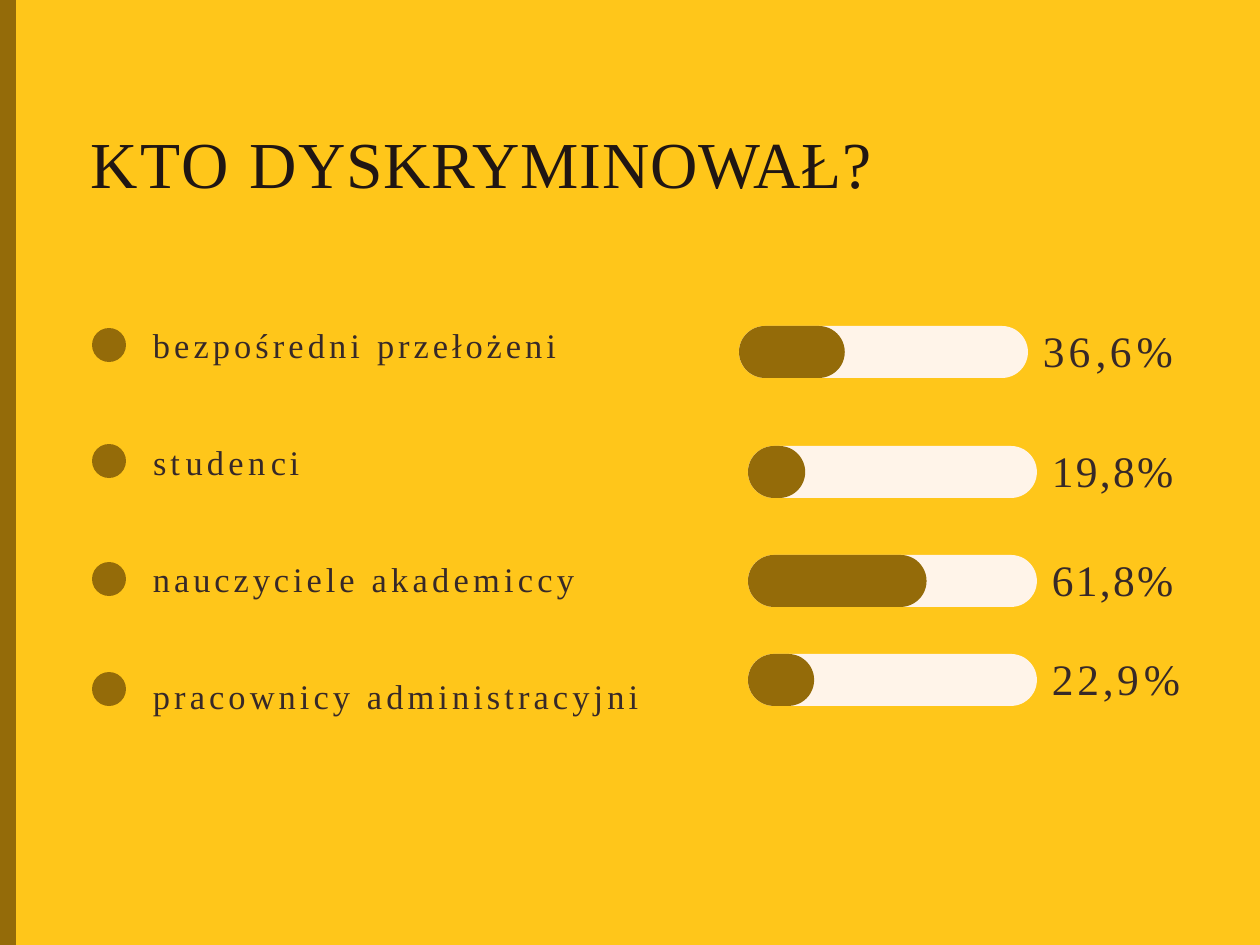
from dataclasses import dataclass

from pptx import Presentation
from pptx.dml.color import RGBColor
from pptx.enum.shapes import MSO_SHAPE as Shape
from pptx.util import Emu, Pt

EMU_PER_PX = 7743
SLIDE_W, SLIDE_H = 1260, 945
EDGE_W = 16

LABEL_X, LABEL_Y, LABEL_STEP, LABEL_H = 151, 322, 117, 45
DOT_X, DOT_SIZE = 92, 34
BAR_W, BAR_H = 289, 52
VALUE_DX, VALUE_DY, VALUE_W, VALUE_H = 302, -4, 144, 55

# Texts are lists of (text, letter spacing in points).
TITLE = [("KTO ", 1.4), ("DYSKRYMINOWAŁ?", 0.5)]

# label, label width, dot top, bar left, bar top, percent
ROWS = [
    ([("bezpośredni ", 2.5), ("przełożeni", 2.4)], 414, 328, 739, 326, 36.6),
    ([("s", 2.5), ("t", 3.4), ("u", 2.4), ("d", 2.6), ("e", 2.8), ("n", 3.3),
      ("c", 2.1), ("i", 1)], 152, 444, 748, 446, 19.8),
    ([("nauczyciele ", 2.4), ("akademiccy", 2.6)], 431, 562, 748, 555, 61.8),
    ([("pracownicy administracyjni", 2.5)], 497, 672, 748, 654, 22.9),
]

SUPERIORS = [("3", 2.4), ("6", 3.1), (",", 2.1), ("6", 3.1), ("%", 1.8)]
STUDENTS = [("19,8%", 1.4)]
TEACHERS = [("61,8%", 1.4)]
OFFICE_STAFF = [("22", 2.2), (",", 2.1), ("9", 3.1), ("%", 1.8)]


@dataclass(frozen=True)
class Theme:
    font: str = "Times New Roman"
    background: str = "FFC61A"
    accent: str = "946B09"
    track: str = "FFF4E9"
    title: str = "201613"
    text: str = "372928"
    title_size: float = 40
    label_size: float = 21
    value_size: float = 26.5


def px(n):
    return Emu(round(n * EMU_PER_PX))


def add_text(p, text, *, font, size, color, spacing):
    """Add a run; spacing is the gap between letters in points."""
    r = p.add_run()
    r.text = text
    r.font.name = font
    r.font.size = Pt(size)
    r.font.color.rgb = RGBColor.from_string(color)
    r._r.get_or_add_rPr().set("spc", str(round(spacing * 100)))


class SlideBuilder:
    def __init__(self, slide, theme):
        self.slide = slide
        self.theme = theme

    def shape(self, kind, x, y, w, h, color, parent=None):
        shapes = (parent or self.slide).shapes
        sp = shapes.add_shape(kind, px(x), px(y), px(w), px(h))
        sp.shadow.inherit = False
        sp.fill.solid()
        sp.fill.fore_color.rgb = RGBColor.from_string(color)
        sp.line.fill.background()
        return sp

    def text(self, x, y, w, h, *paragraphs, gap=0, **style):
        """Write paragraphs of spaced runs; gap is the space between them."""
        tf = self.slide.shapes.add_textbox(px(x), px(y), px(w), px(h)).text_frame
        tf.word_wrap = True
        tf.margin_left = tf.margin_top = px(2)
        tf.margin_right = tf.margin_bottom = 0
        for i, runs in enumerate(paragraphs):
            p = tf.add_paragraph() if i else tf.paragraphs[0]
            p.space_before = Pt(gap if i else 1)
            for text, spacing in runs:
                add_text(p, text, font=self.theme.font, spacing=spacing, **style)

    def dot(self, y):
        self.shape(Shape.OVAL, DOT_X, y, DOT_SIZE, DOT_SIZE, self.theme.accent)

    def label(self, y, w, runs):
        self.text(LABEL_X, y, w, LABEL_H, runs,
                  size=self.theme.label_size, color=self.theme.text)

    def progress_bar(self, x, y, percent):
        group = self.slide.shapes.add_group_shape()
        parts = [(BAR_W, self.theme.track),
                 (BAR_W * percent / 100, self.theme.accent)]
        for w, color in parts:
            sp = self.shape(Shape.ROUNDED_RECTANGLE, x, y, w, BAR_H, color, group)
            sp.adjustments[0] = 0.5

    def values(self, bar_x, bar_y, *paragraphs, h=VALUE_H, gap=0):
        self.text(bar_x + VALUE_DX, bar_y + VALUE_DY, VALUE_W, h, *paragraphs,
                  gap=gap, size=self.theme.value_size, color=self.theme.text)


def main():
    prs = Presentation()
    prs.slide_width, prs.slide_height = px(SLIDE_W), px(SLIDE_H)
    theme = Theme()
    s = SlideBuilder(prs.slides.add_slide(prs.slide_layouts[6]), theme)

    s.shape(Shape.RECTANGLE, EDGE_W, 0, SLIDE_W - EDGE_W, SLIDE_H, theme.background)
    s.shape(Shape.RECTANGLE, 0, 0, EDGE_W, SLIDE_H, theme.accent)
    s.text(89, 121, 799, 81, TITLE, size=theme.title_size, color=theme.title)

    for i, (label, label_w, dot_y, bar_x, bar_y, percent) in enumerate(ROWS):
        s.dot(dot_y)
        s.label(LABEL_Y + i * LABEL_STEP, label_w, label)
        s.progress_bar(bar_x, bar_y, percent)

    s.values(739, 326, SUPERIORS)
    s.values(748, 446, STUDENTS)
    s.values(748, 555, TEACHERS, OFFICE_STAFF, h=155, gap=28.8)

    prs.save("out.pptx")


if __name__ == "__main__":
    main()
